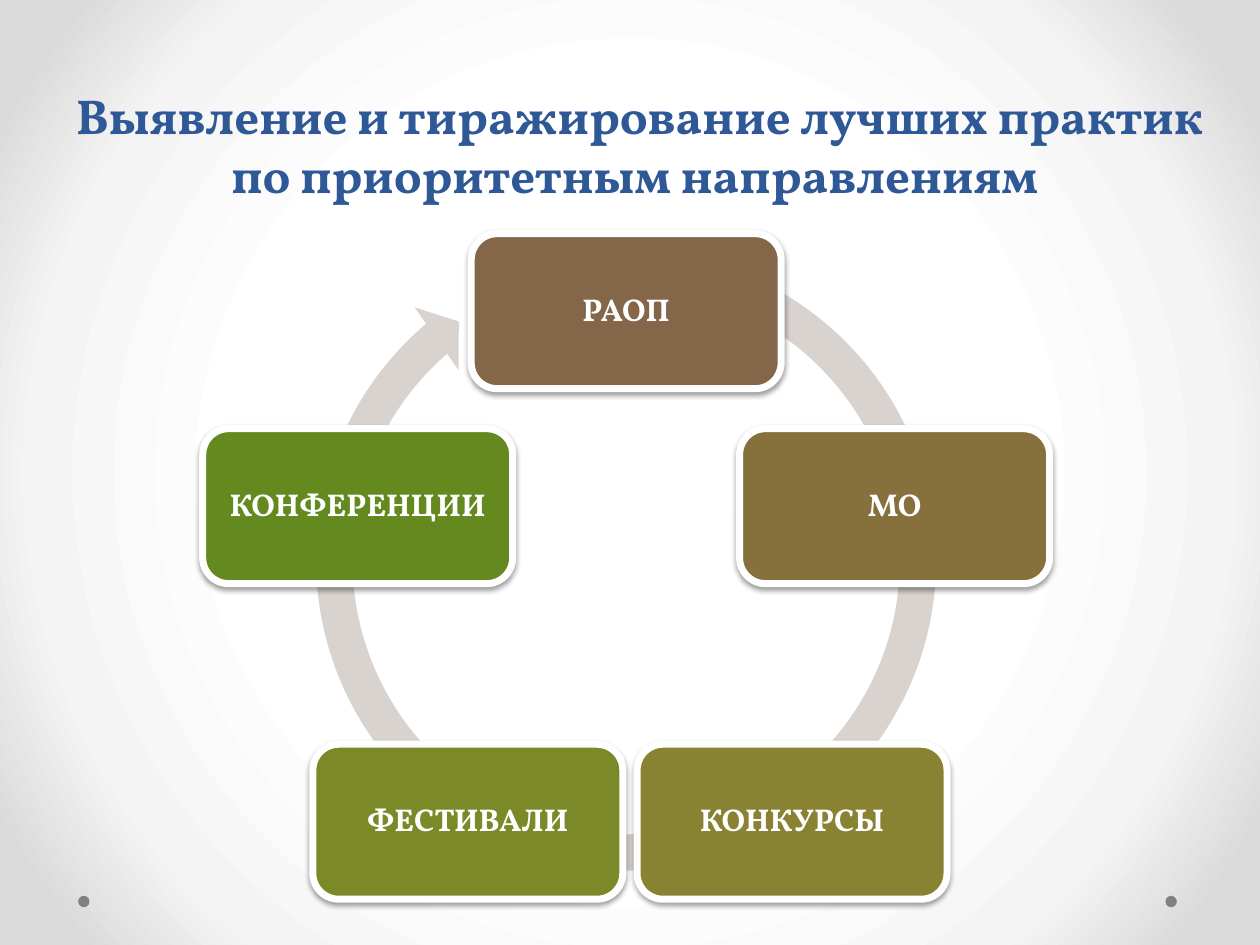
import math

import pptx
import pptx.dml.color
import pptx.enum.shapes
import pptx.enum.text
import pptx.oxml
import pptx.oxml.ns
import pptx.util

Inches = pptx.util.Inches
Pt = pptx.util.Pt
RGBColor = pptx.dml.color.RGBColor
Shape = pptx.enum.shapes.MSO_SHAPE
Anchor = pptx.enum.text.MSO_ANCHOR
Align = pptx.enum.text.PP_ALIGN

TITLE = "Выявление и тиражирование лучших практик по приоритетным направлениям "
STEPS = [
    ("РАОП", RGBColor(0x84, 0x66, 0x48), 0),
    ("МО", RGBColor(0x86, 0x71, 0x3D), 0),
    ("КОНКУРСЫ", RGBColor(0x88, 0x82, 0x32), 0),
    ("ФЕСТИВАЛИ", RGBColor(0x7B, 0x89, 0x28), 0.06),
    ("КОНФЕРЕНЦИИ", RGBColor(0x63, 0x89, 0x1F), 0),
]
BACKGROUND_STOPS = [(50, "FFFFFF"), (76, "F4F4F4"), (92, "DADADA")]
DOT_LEFTS = [0.62, 9.25]
ARROW_ADJUSTMENTS = [0.055, 3.307, 137.7, 173.896, 0.058]

FONT = "Vollkorn"
BLUE = RGBColor(0x2F, 0x58, 0x97)
WHITE = RGBColor(0xFF, 0xFF, 0xFF)
GRAY = RGBColor(0x80, 0x80, 0x80)
RING = RGBColor(0xD9, 0xD3, 0xCF)

CENTER_X, CENTER_Y, RADIUS = 4.97, 4.71, 2.24
BOX_WIDTH, BOX_HEIGHT = 2.46, 1.23
NAMESPACE = pptx.oxml.ns.nsdecls("a")


def set_background(page):
    page.background.fill.solid()
    properties = page.element.find(".//" + pptx.oxml.ns.qn("p:bgPr"))
    stops = "".join(
        f'<a:gs pos="{position * 1000}"><a:srgbClr val="{color}"/></a:gs>'
        for position, color in BACKGROUND_STOPS
    )
    properties.replace(properties[0], pptx.oxml.parse_xml(
        f'<a:gradFill {NAMESPACE} rotWithShape="1"><a:gsLst>{stops}</a:gsLst>'
        '<a:path path="circle"><a:fillToRect l="50000" t="50000" r="50000" b="50000"/>'
        "</a:path></a:gradFill>"
    ))


def add_plain_shape(page, kind, left, top, width, height, color):
    shape = page.shapes.add_shape(
        kind, Inches(left), Inches(top), Inches(width), Inches(height))
    shape.shadow.inherit = False
    shape.fill.solid()
    shape.fill.fore_color.rgb = color
    shape.line.fill.background()
    return shape


def write_text(shape, text, size, color):
    para = shape.text_frame.paragraphs[0]
    para.text = text
    para.alignment = Align.CENTER
    para.font.name = FONT
    para.font.size = Pt(size)
    para.font.bold = True
    para.font.color.rgb = color
    return para


def add_shadow(shape):
    effects = shape.element.spPr.find(pptx.oxml.ns.qn("a:effectLst"))
    effects.append(pptx.oxml.parse_xml(
        f'<a:outerShdw {NAMESPACE} blurRad="{Pt(3.1)}" dist="{Pt(1.6)}" dir="5400000" '
        'rotWithShape="0"><a:srgbClr val="000000"><a:alpha val="38000"/></a:srgbClr>'
        "</a:outerShdw>"
    ))


def add_step(page, index, name, color, nudge):
    angle = 2 * math.pi * index / len(STEPS)
    left = CENTER_X + RADIUS * math.sin(angle) - BOX_WIDTH / 2 + nudge
    top = CENTER_Y - RADIUS * math.cos(angle) - BOX_HEIGHT / 2
    box = add_plain_shape(
        page, Shape.ROUNDED_RECTANGLE, left, top, BOX_WIDTH, BOX_HEIGHT, color)
    box.line.color.rgb = WHITE
    box.line.width = Pt(4)
    add_shadow(box)
    frame = box.text_frame
    frame.word_wrap = True
    frame.vertical_anchor = Anchor.MIDDLE
    frame.margin_left = frame.margin_right = Inches(0.07)
    frame.margin_top = frame.margin_bottom = Inches(0.07)
    write_text(box, name, 18, WHITE).line_spacing = 0.9


def main():
    deck = pptx.Presentation()
    deck.slide_width, deck.slide_height = Inches(10), Inches(7.5)
    page = deck.slides.add_slide(deck.slide_layouts[5])
    set_background(page)

    for left in DOT_LEFTS:
        add_plain_shape(page, Shape.OVAL, left, 7.11, 0.09, 0.09, GRAY)

    title = page.shapes.title
    title.left, title.top = Inches(0.5), Inches(0.58)
    title.width, title.height = Inches(9.15), Inches(1.08)
    title.text_frame.vertical_anchor = Anchor.BOTTOM
    title.text_frame.auto_size = pptx.enum.text.MSO_AUTO_SIZE.TEXT_TO_FIT_SHAPE
    write_text(title, TITLE, 28, BLUE)

    ring = add_plain_shape(page, Shape.CIRCULAR_ARROW, 2.35, 1.83, 5.24, 5.24, RING)
    for index, value in enumerate(ARROW_ADJUSTMENTS):
        ring.adjustments[index] = value

    for index, (name, color, nudge) in enumerate(STEPS):
        add_step(page, index, name, color, nudge)

    deck.save("out.pptx")


if __name__ == "__main__":
    main()
